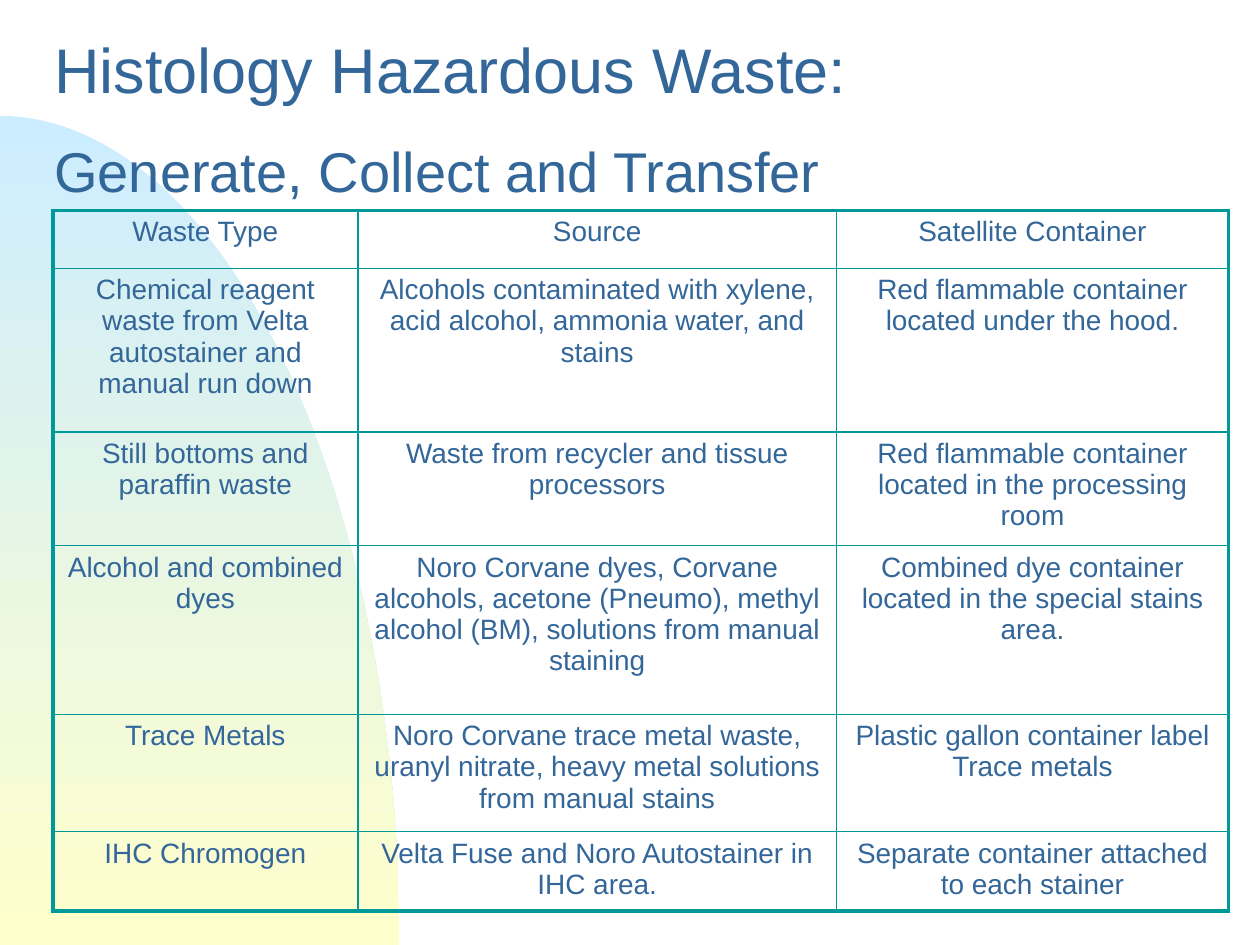
from math import cos, pi, sin

from lxml.etree import SubElement
from pptx import Presentation
from pptx.dml.color import RGBColor
from pptx.enum.text import MSO_ANCHOR, MSO_AUTO_SIZE, PP_ALIGN
from pptx.oxml.ns import qn
from pptx.util import Inches, Pt

TEXT, BORDER = "336699", "009999"
THICK, THIN = 2.25, 1
WIDTH, HEIGHT = 10, 7.5
COLUMNS = [2.42, 3.8, 3.11]
ROWS = [0.46, 1.3, 0.9, 1.34, 0.93, 0.63]
WASTE = [
    ("Waste Type", "Source", "Satellite Container"),
    ("Chemical reagent waste from Velta autostainer and manual run down",
     "Alcohols contaminated with xylene, acid alcohol, ammonia water, and stains",
     "Red flammable container located under the hood."),
    ("Still bottoms and paraffin waste",
     "Waste from recycler and tissue processors",
     "Red flammable container located in the processing room"),
    ("Alcohol and combined dyes",
     "Noro Corvane dyes, Corvane alcohols, acetone (Pneumo), methyl alcohol "
     "(BM), solutions from manual staining",
     "Combined dye container located in the special stains area."),
    ("Trace Metals",
     "Noro Corvane trace metal waste, uranyl nitrate, heavy metal solutions "
     "from manual stains",
     "Plastic gallon container label Trace metals"),
    ("IHC Chromogen",
     "Velta Fuse and Noro Autostainer in IHC area.",
     "Separate container attached to each stainer"),
]


def color(value):
    return RGBColor.from_string(value)


def style_text(para, size, align):
    para.alignment = align
    para.font.name = "Arial"
    para.font.size = Pt(size)
    para.font.color.rgb = color(TEXT)


deck = Presentation()
deck.slide_width, deck.slide_height = Inches(WIDTH), Inches(HEIGHT)
slide = deck.slides.add_slide(deck.slide_layouts[5])

# Quarter ellipse centred on the bottom left corner
radius_x, radius_y, steps = 3.17, 6.58, 90
angles = [pi / 2 * step / steps for step in range(steps + 1)]
curve = [(Inches(radius_x * sin(angle)), Inches(HEIGHT - radius_y * cos(angle)))
         for angle in angles]
builder = slide.shapes.build_freeform(0, Inches(HEIGHT))
builder.add_line_segments(curve, close=True)
arc = builder.convert_to_shape()
arc.shadow.inherit = False
arc.line.fill.background()
arc.fill.gradient()
arc.fill.gradient_angle = 270
for stop, shade in zip(arc.fill.gradient_stops, ("CCECFF", "FFFFCC")):
    stop.color.rgb = color(shade)
slide.shapes._spTree.insert(2, arc._element)  # behind the title

title = slide.shapes.title
title.left, title.top = Inches(0.33), Inches(0.42)
title.width, title.height = Inches(9.33), Inches(1.17)
frame = title.text_frame
frame.text = "Histology Hazardous Waste:\nGenerate, Collect and Transfer"
frame.auto_size = MSO_AUTO_SIZE.NONE
frame.vertical_anchor = MSO_ANCHOR.MIDDLE
for para, size in zip(frame.paragraphs, (36, 32)):
    style_text(para, size, PP_ALIGN.LEFT)
    para.line_spacing = 0.7
frame.paragraphs[1].space_before = Pt(29)

table = slide.shapes.add_table(
    len(ROWS), len(COLUMNS), Inches(0.42), Inches(1.67),
    Inches(sum(COLUMNS)), Inches(sum(ROWS))).table
table.first_row = table.horz_banding = False
for column, width in zip(table.columns, COLUMNS):
    column.width = Inches(width)
for row, height in zip(table.rows, ROWS):
    row.height = Inches(height)

last_row, last_column = len(ROWS) - 1, len(COLUMNS) - 1
for r, texts in enumerate(WASTE):
    for c, text in enumerate(texts):
        cell = table.cell(r, c)
        cell.text = text
        style_text(cell.text_frame.paragraphs[0], 16, PP_ALIGN.CENTER)
        properties = cell._tc.get_or_add_tcPr()
        outer_edges = {"lnL": c == 0, "lnR": c == last_column,
                       "lnT": r == 0, "lnB": r == last_row}
        for side, outer in outer_edges.items():
            line = SubElement(properties, qn(f"a:{side}"),
                              w=str(Pt(THICK if outer else THIN)))
            fill = SubElement(line, qn("a:solidFill"))
            SubElement(fill, qn("a:srgbClr"), val=BORDER)
        cell.fill.background()

deck.save("out.pptx")
